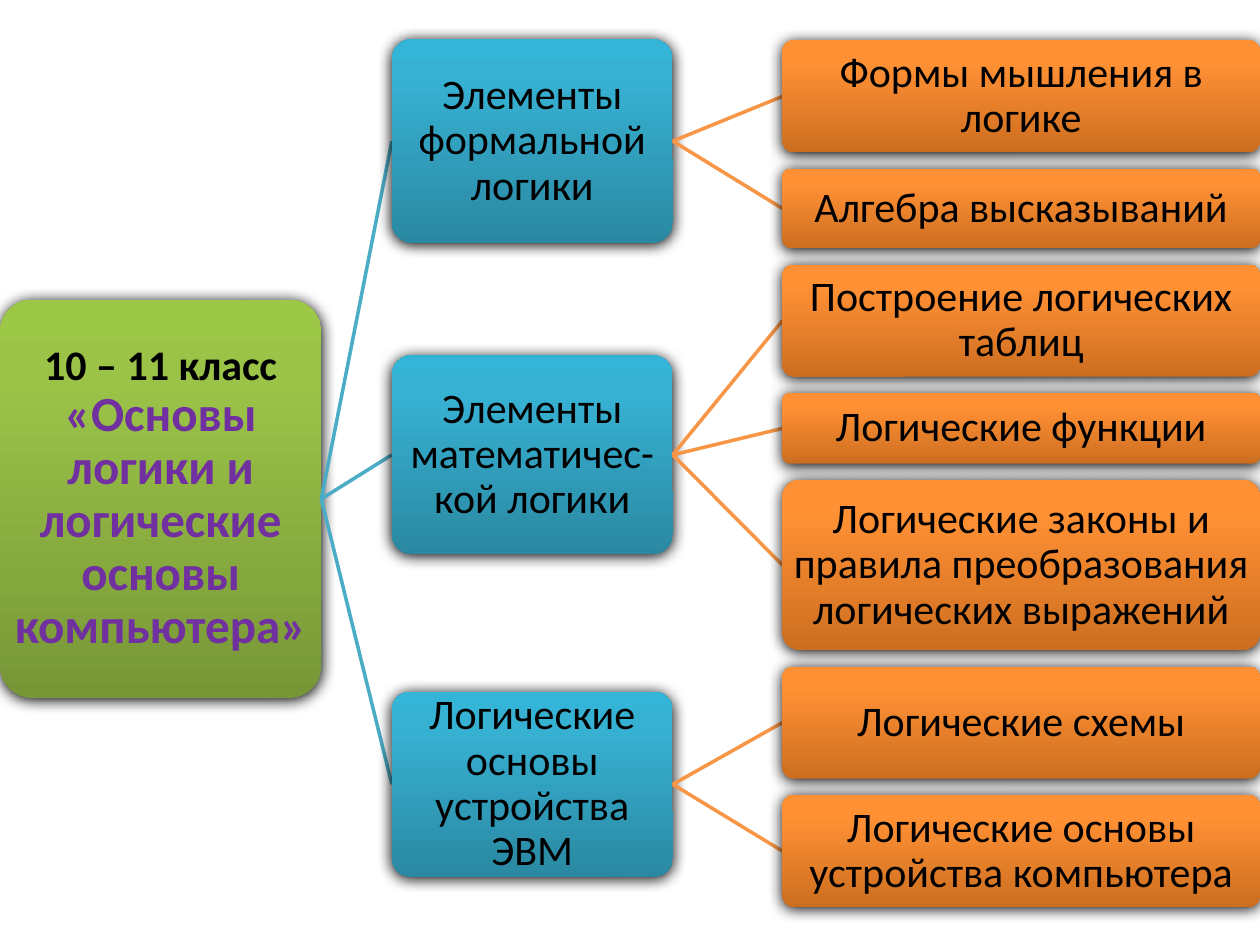
"""Builds a slide with a three-level tree of logic topics for grades 10 and 11."""
import copy
import dataclasses
import typing

import lxml.etree
import pptx
import pptx.dml.color
import pptx.enum.shapes
import pptx.enum.text
import pptx.oxml.ns
import pptx.util

Inches = pptx.util.Inches
COLORS = {"text": "000000", "topic": "7030A0", "shade": "000000"}
GAP = 0.13


@dataclasses.dataclass
class Level:
    left: float
    width: float
    stops: tuple[str, str, str]
    line: str


@dataclasses.dataclass
class Node:
    text: str
    top: float
    height: float
    kids: list["Node"] = dataclasses.field(default_factory=list)
    topic: str = ""

    @property
    def middle(self) -> float:
        return self.top + self.height / 2


LEVELS = [
    Level(0, 2.55, ("779737", "9BC348", "9DC746"), "9BBB59"),
    Level(3.11, 2.23, ("2A88A2", "37B1D2", "34B4D6"), "4BACC6"),
    Level(6.21, 3.79, ("CC6E20", "FF9034", "FF9136"), "F79646"),
]


def rgb(code: str) -> pptx.dml.color.RGBColor:
    return pptx.dml.color.RGBColor.from_string(code)


def stack(top: float, items: list[tuple[str, float]]) -> list[Node]:
    nodes = []
    for text, height in items:
        nodes.append(Node(text, top, height))
        top += height + GAP
    return nodes


def paint(shape: typing.Any, colors: tuple[str, str, str]) -> None:
    shape.fill.gradient()
    shape.fill.gradient_angle = 90
    stops = shape._element.spPr.find(".//" + pptx.oxml.ns.qn("a:gsLst"))
    stops.append(copy.deepcopy(stops[-1]))
    for stop, color, place in zip(shape.fill.gradient_stops, colors, (0, 0.8, 1)):
        stop.color.rgb = rgb(color)
        stop.position = place
    shape.line.fill.background()


def shade(shape: typing.Any) -> None:
    name = pptx.oxml.ns.qn
    shape.shadow.inherit = False
    effects = shape._element.spPr.find(name("a:effectLst"))
    outer = lxml.etree.SubElement(
        effects, name("a:outerShdw"), blurRad=str(pptx.util.Pt(8.5)),
        dist=str(pptx.util.Pt(1)), dir="5400000", algn="ctr", rotWithShape="0")
    lxml.etree.SubElement(outer, name("a:srgbClr"), val=COLORS["shade"])


def style(run: typing.Any, size: int, color: str, bold: bool) -> None:
    run.font.name = "Calibri"
    run.font.size = pptx.util.Pt(size)
    run.font.bold = bold
    run.font.color.rgb = rgb(color)


def write(shape: typing.Any, node: Node) -> None:
    frame = shape.text_frame
    frame.text = node.text
    frame.word_wrap = True
    frame.vertical_anchor = pptx.enum.text.MSO_ANCHOR.MIDDLE
    frame.margin_left = frame.margin_right = Inches(0.02)
    frame.margin_top = frame.margin_bottom = Inches(0.02)
    para = frame.paragraphs[0]
    para.alignment = pptx.enum.text.PP_ALIGN.CENTER
    para.line_spacing = 0.9
    style(para.runs[0], 24, COLORS["text"], bool(node.topic))
    if node.topic:
        run = para.add_run()
        run.text = node.topic
        style(run, 28, COLORS["topic"], True)


def link(shapes: typing.Any, start: Node, end: Node, depth: int) -> None:
    source, target = LEVELS[depth - 1], LEVELS[depth]
    line = shapes.add_connector(
        pptx.enum.shapes.MSO_CONNECTOR.STRAIGHT,
        Inches(source.left + source.width), Inches(start.middle),
        Inches(target.left), Inches(end.middle))
    line.line.color.rgb = rgb(target.line)
    line.line.width = pptx.util.Pt(2)
    lxml.etree.SubElement(line._element.spPr, pptx.oxml.ns.qn("a:effectLst"))


def draw(shapes: typing.Any, node: Node, depth: int = 0) -> None:
    level = LEVELS[depth]
    box = shapes.add_shape(
        pptx.enum.shapes.MSO_SHAPE.ROUNDED_RECTANGLE, Inches(level.left),
        Inches(node.top), Inches(level.width), Inches(node.height))
    box.adjustments[0] = 0.1
    paint(box, level.stops)
    shade(box)
    write(box, node)
    for kid in node.kids:
        link(shapes, node, kid, depth + 1)
        draw(shapes, kid, depth + 1)


def main() -> None:
    leaves = stack(0.32, [
        ("Формы мышления в логике", 0.89),
        ("Алгебра высказываний", 0.63),
        ("Построение логических таблиц", 0.89),
        ("Логические функции", 0.56),
        ("Логические законы и правила преобразования логических выражений", 1.35),
        ("Логические схемы", 0.89),
        ("Логические основы устройства компьютера", 0.89),
    ])
    parts = [
        Node("Элементы формальной логики", 0.31, 1.62, leaves[:2]),
        Node("Элементы математичес-кой логики", 2.82, 1.58, leaves[2:5]),
        Node("Логические основы устройства ЭВМ", 5.49, 1.47, leaves[5:]),
    ]
    root = Node("10 – 11 класс ", 2.38, 3.16, parts,
                "«Основы логики и логические основы компьютера»")
    deck = pptx.Presentation()
    deck.slide_width, deck.slide_height = Inches(10), Inches(7.5)
    slide = deck.slides.add_slide(deck.slide_layouts[6])
    draw(slide.shapes, root)
    deck.save("out.pptx")


if __name__ == "__main__":
    main()
